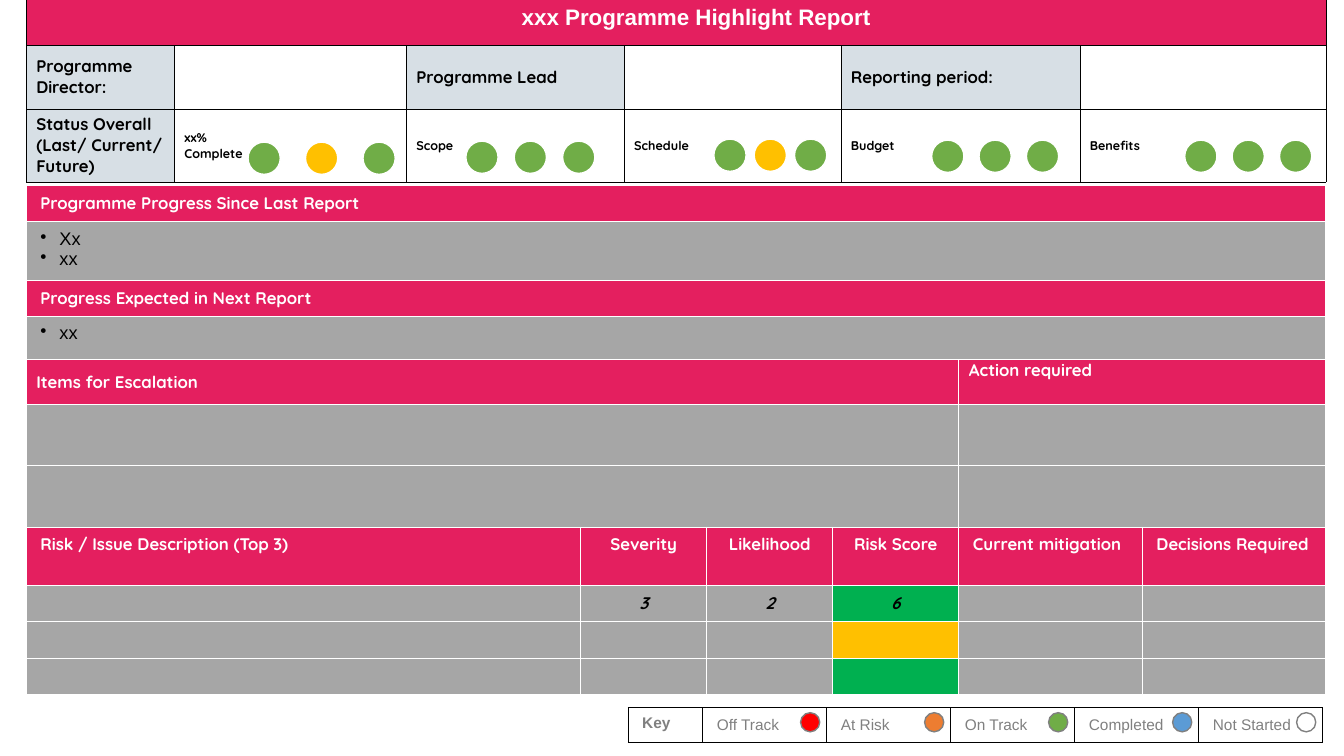
from lxml import etree
from pptx import Presentation
from pptx import util as u
from pptx.dml.color import RGBColor
from pptx.enum import shapes, text
from pptx.oxml import ns

HUES = {
    "pink": "E41F5F", "grey": "A6A6A6", "pale": "D7DFE5", "white": "FFFFFF",
    "black": "000000", "dim": "808080", "leaf": "70AD47", "gold": "FFC000",
    "green": "00B050", "red": "FF0000", "orange": "ED7D31", "blue": "5B9BD5",
}
SANS, ROUND = "Arial", "Quicksand"
MID, TOP = text.MSO_ANCHOR.MIDDLE, text.MSO_ANCHOR.TOP
LEFT, CENTER = text.PP_ALIGN.LEFT, text.PP_ALIGN.CENTER
SLIM = (0.1, 0.05)
WIDE = (0.14, 0.07)


def rgb(hue):
    return RGBColor.from_string(HUES[hue])


def add_node(parent, tag, place, **attrs):
    node = etree.Element(ns.qn(tag), attrs)
    parent.insert(place, node)
    return node


def add_grid(slide, box, cols, rows, hue, width):
    left, top, wide = box
    frame = slide.shapes.add_table(
        len(rows), len(cols), u.Inches(left), u.Inches(top),
        u.Inches(wide), u.Inches(sum(rows)))
    grid = frame.table
    grid.first_row = grid.horz_banding = False
    for col, size in zip(grid.columns, cols):
        col.width = u.Inches(size)
    for row, size in zip(grid.rows, rows):
        row.height = u.Inches(size)
    for cell in grid.iter_cells():
        cell.margin_top = cell.margin_bottom = 0
        props = cell._tc.get_or_add_tcPr()
        for place, side in enumerate("LRTB"):
            line = add_node(props, f"a:ln{side}", place, w=str(u.Pt(width)))
            solid = add_node(line, "a:solidFill", 0)
            add_node(solid, "a:srgbClr", 0, val=HUES[hue])
    return grid


def paint(cell, hue):
    cell.fill.solid()
    cell.fill.fore_color.rgb = rgb(hue)


def write(cell, words, size, face, hue, pad=WIDE, bold=True, italic=False,
          align=LEFT, anchor=TOP, bullet=False):
    cell.margin_left = cell.margin_right = u.Inches(pad[0])
    cell.margin_top = cell.margin_bottom = u.Inches(pad[1])
    cell.vertical_anchor = anchor
    frame = cell.text_frame
    frame.text = words
    for para in frame.paragraphs:
        para.alignment = align
        font = para.font
        font.size, font.name = u.Pt(size), face
        font.bold, font.italic = bold, italic
        font.color.rgb = rgb(hue)
        if bullet:
            props = para._p.get_or_add_pPr()
            inset = u.Inches(0.19)
            props.set("marL", str(inset))
            props.set("indent", str(-inset))
            add_node(props, "a:buChar", 0, char="•")


def add_dots(slide, left, top, step, size, hues, edge):
    for i, hue in enumerate(hues):
        dot = slide.shapes.add_shape(
            shapes.MSO_SHAPE.FLOWCHART_CONNECTOR, u.Inches(left + i * step),
            u.Inches(top), u.Inches(size), u.Inches(size))
        dot.shadow.inherit = False
        dot.fill.solid()
        dot.fill.fore_color.rgb = rgb(hue)
        dot.line.color.rgb = rgb(edge)
        dot.line.width = u.Pt(1)


def add_report(slide, box):
    cols = [5.5, 1.25, 1.25, 1.25, 1.82, 1.82]
    rows = [0.36, 0.58, 0.36, 0.43, 0.44, 0.61, 0.61, 0.58, 0.36, 0.36, 0.36]
    grid = add_grid(slide, box, cols, rows, "white", 1)
    heads = (0, 2, 4, 7)
    for r in range(len(rows)):
        for c in range(len(cols)):
            paint(grid.cell(r, c), "pink" if r in heads else "grey")
    for r in range(4):
        grid.cell(r, 0).merge(grid.cell(r, 5))
    for r in range(4, 7):
        grid.cell(r, 0).merge(grid.cell(r, 3))
        grid.cell(r, 4).merge(grid.cell(r, 5))
    for r, words in ((0, "Programme Progress Since Last Report"),
                     (2, "Progress Expected in Next Report")):
        write(grid.cell(r, 0), words, 12, ROUND, "white")
    for r, words in ((1, "Xx\nxx"), (3, "xx")):
        write(grid.cell(r, 0), words, 13, SANS, "black",
              bold=False, bullet=True)
    for c, words, anchor in ((0, "Items for Escalation", MID),
                             (4, "Action required", TOP)):
        write(grid.cell(4, c), words, 12, ROUND, "white",
              pad=(0.1, 0), anchor=anchor)
    names = ["Risk / Issue Description (Top 3)", "Severity", "Likelihood",
             "Risk Score", "Current mitigation", "Decisions Required"]
    for c, words in enumerate(names):
        write(grid.cell(7, c), words, 12, ROUND, "white",
              align=CENTER if c in (1, 2, 3) else LEFT)
    for c, words in enumerate("326", 1):
        write(grid.cell(8, c), words, 12, ROUND, "black",
              italic=True, align=CENTER)
    for r, hue in enumerate(("green", "gold", "green"), 8):
        paint(grid.cell(r, 3), hue)


def add_key(slide, box):
    left, top, _ = box
    step = 1.23
    grid = add_grid(slide, box, [0.74] + [step] * 5, [0.34], "black", 0.5)
    names = ["Key", "Off Track", "At Risk", "On Track", "Completed",
             "Not Started"]
    for c, words in enumerate(names):
        cell = grid.cell(0, c)
        paint(cell, "white")
        write(cell, words, 11, SANS, "dim", bold=c == 0,
              anchor=MID if c else TOP)
    add_dots(slide, left + 1.71, top + 0.05, step, 0.19,
             ["red", "orange", "leaf", "blue", "white"], "dim")


def add_header(slide, box):
    left, top, _ = box
    cols = [1.47, 2.3, 2.16, 2.15, 2.37, 2.44]
    grid = add_grid(slide, box, cols, [0.55, 0.63, 0.63], "black", 0.25)
    for cell in grid.iter_cells():
        paint(cell, "white")
    title = grid.cell(0, 0)
    title.merge(grid.cell(0, 5))
    paint(title, "pink")
    write(title, "xxx Programme Highlight Report", 16, SANS, "white",
          pad=SLIM, align=CENTER, anchor=MID)
    title.margin_left = u.Inches(0.5)
    labels = [(1, 0, "Programme Director:"), (1, 2, "Programme Lead"),
              (1, 4, "Reporting period:"),
              (2, 0, "Status Overall\n(Last/ Current/ Future)")]
    for r, c, words in labels:
        paint(grid.cell(r, c), "pale")
        write(grid.cell(r, c), words, 12, ROUND, "black", pad=SLIM, anchor=MID)
    calm = ["leaf"] * 3
    mixed = ["leaf", "gold", "leaf"]
    states = [("xx%\nComplete", 2.2, 1.51, 0.57, mixed),
              ("Scope", 4.36, 1.5, 0.48, calm),
              ("Schedule", 6.82, 1.48, 0.4, mixed),
              ("Budget", 8.98, 1.49, 0.47, calm),
              ("Benefits", 11.49, 1.49, 0.47, calm)]
    for c, (words, x, y, step, hues) in enumerate(states, 1):
        write(grid.cell(2, c), words, 9, ROUND, "black", pad=SLIM, anchor=MID)
        add_dots(slide, left + x, top + y, step, 0.32, hues, "white")


def main():
    deck = Presentation()
    deck.slide_width, deck.slide_height = u.Inches(13.33), u.Inches(7.5)
    slide = deck.slides.add_slide(deck.slide_layouts[6])
    add_report(slide, (0.26, 1.84, 12.89))
    add_key(slide, (6.23, 7.02, 6.89))
    add_header(slide, (0.26, -0.1, 12.89))
    deck.save("out.pptx")


if __name__ == "__main__":
    main()
